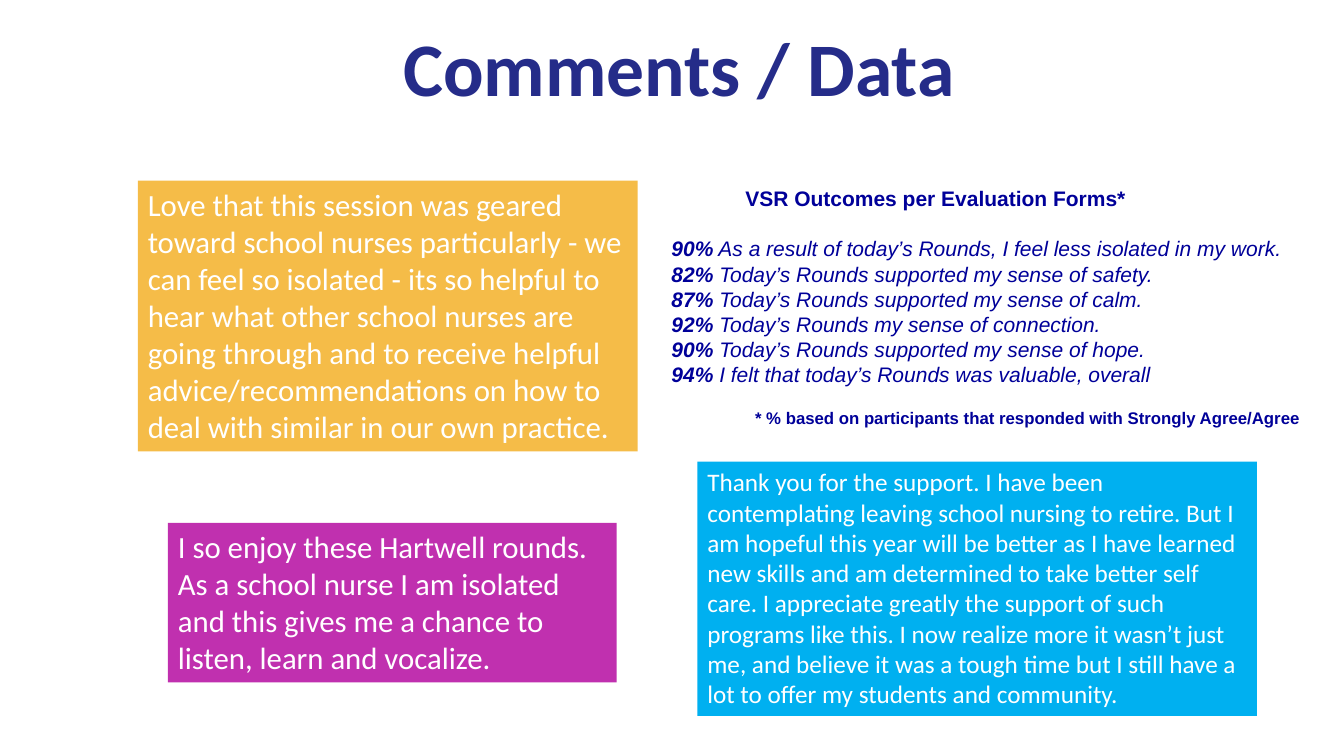
from pptx import Presentation
from pptx.dml.color import RGBColor
from pptx.enum.shapes import MSO_SHAPE as Shape
from pptx.enum.text import MSO_ANCHOR as Anchor, PP_ALIGN as Align
from pptx.util import Pt

COLORS = {
    "title": "252C89",
    "data": "000099",
    "white": "FFFFFF",
    "blue": "00B0F0",
    "pink": "C030AF",
    "gold": "F5BC48",
}

QUOTES = [
    ("blue", 18, (498.2, 329.8, 399.6, 181.5),
     "Thank you for the support. I have been contemplating leaving school "
     "nursing to retire. But I am hopeful this year will be better as I have "
     "learned new skills and am determined to take better self care. I "
     "appreciate greatly the support of such programs like this. I now "
     "realize more it wasn’t just me, and believe it was a tough time but I "
     "still have a lot to offer my students and community."),
    ("pink", 22, (120, 373.5, 320.5, 114),
     "I so enjoy these Hartwell rounds. As a school nurse I am isolated and "
     "this gives me a chance to listen, learn and vocalize."),
    ("gold", 22, (98.5, 129, 357, 193.5),
     "Love that this session was geared toward school nurses particularly - "
     "we can feel so isolated - its so helpful to hear what other school "
     "nurses are going through and to receive helpful advice/recommendations "
     "on how to deal with similar in our own practice."),
]

RATES = [
    ("90%", "As a result of today’s Rounds, I feel less isolated in my work."),
    ("82%", "Today’s Rounds supported my sense of safety."),
    ("87%", "Today’s Rounds supported my sense of calm."),
    ("92%", "Today’s Rounds my sense of connection."),
    ("90%", "Today’s Rounds supported my sense of hope."),
    ("94%", "I felt that today’s Rounds was valuable, overall"),
]


class Page:
    def __init__(self, slide):
        self.slide = slide
        self.head = "Calibri"
        self.body = "Arial"

    def color(self, name):
        return RGBColor.from_string(COLORS[name])

    def style(self, para, face, size, color, bold=None, align=Align.LEFT):
        para.alignment = align
        font = para.font
        font.name, font.size, font.bold = face, Pt(size), bold
        font.color.rgb = self.color(color)

    def frame(self, box):
        text = self.slide.shapes.add_textbox(*map(Pt, box)).text_frame
        text.word_wrap = True
        return text

    def title(self, text, box):
        para = self.frame(box).paragraphs[0]
        para.text = text
        para.line_spacing = 0.9
        self.style(para, self.head, 54, "title", True, Align.CENTER)

    def quote(self, fill, size, box, text):
        rect = self.slide.shapes.add_shape(Shape.RECTANGLE, *map(Pt, box))
        rect.shadow.inherit = False
        rect.fill.solid()
        rect.fill.fore_color.rgb = self.color(fill)
        rect.line.fill.background()
        frame = rect.text_frame
        frame.word_wrap = True
        frame.vertical_anchor = Anchor.TOP
        para = frame.paragraphs[0]
        para.text = text
        self.style(para, self.head, size, "white")

    def rates(self, head, rows, note, box):
        """Add the heading, one line per share, and the footnote."""
        frame = self.frame(box)
        para = frame.paragraphs[0]
        para.text = head
        para.line_spacing = Pt(18)
        self.style(para, self.body, 15, "data", True, Align.CENTER)

        for i, (share, text) in enumerate(rows):
            para = frame.add_paragraph()
            para.line_spacing = Pt(18)
            para.space_before = Pt(0 if i else 18)
            # python-pptx has no public indent, so set the margin directly
            para._p.get_or_add_pPr().set("marL", str(Pt(72)))
            self.style(para, self.body, 15, "data")
            para.font.italic = True
            run = para.add_run()
            run.text = share
            run.font.bold = True
            para.add_run().text = " " + text

        para = frame.add_paragraph()
        para.text = note
        para.space_before = Pt(15)
        self.style(para, self.body, 12, "data", True, Align.RIGHT)


def main():
    deck = Presentation()
    deck.slide_width, deck.slide_height = Pt(960), Pt(540)
    page = Page(deck.slides.add_slide(deck.slide_layouts[6]))
    page.title("Comments / Data", (125, 18.7, 720, 130))
    for quote in QUOTES:
        page.quote(*quote)
    page.rates(
        "VSR Outcomes per Evaluation Forms*", RATES,
        "* % based on participants that responded with Strongly Agree/Agree",
        (400.5, 129, 535.5, 181.5))
    deck.save("out.pptx")


if __name__ == "__main__":
    main()
